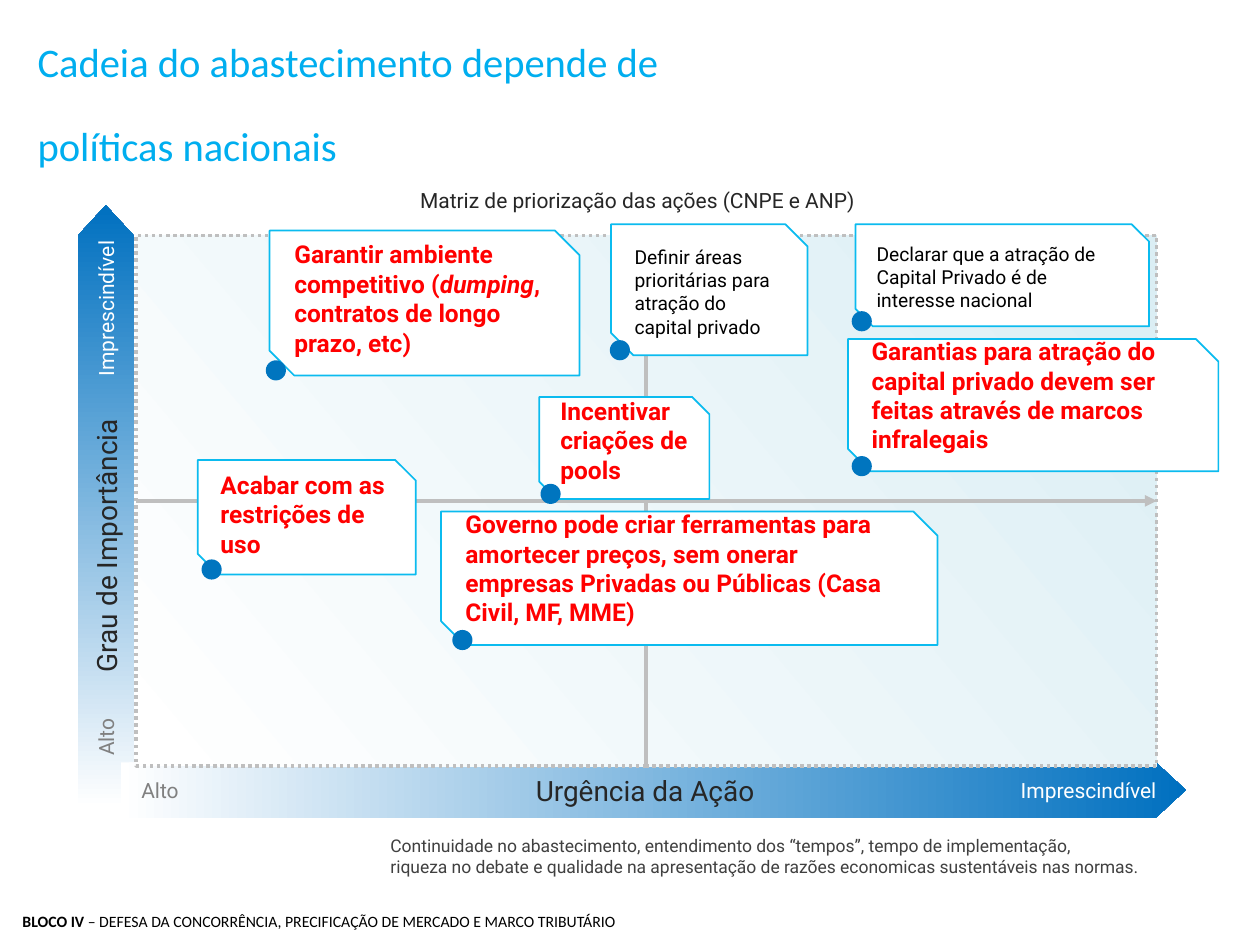
from lxml import etree
from pptx import Presentation
from pptx.dml.color import RGBColor
from pptx.enum.dml import MSO_LINE
from pptx.enum.shapes import MSO_CONNECTOR, MSO_SHAPE
from pptx.enum.text import MSO_ANCHOR, MSO_AUTO_SIZE, PP_ALIGN
from pptx.oxml.ns import qn
from pptx.util import Inches, Pt

ARROW, RECT = MSO_SHAPE.RIGHT_ARROW, MSO_SHAPE.RECTANGLE
SNIP, OVAL = MSO_SHAPE.SNIP_2_DIAG_RECTANGLE, MSO_SHAPE.OVAL
LEFT, CENTER = PP_ALIGN.LEFT, PP_ALIGN.CENTER
TOP, MIDDLE, BOTTOM = MSO_ANCHOR.TOP, MSO_ANCHOR.MIDDLE, MSO_ANCHOR.BOTTOM
GROW, DOTS, LINE = MSO_AUTO_SIZE.SHAPE_TO_FIT_TEXT, MSO_LINE.ROUND_DOT, MSO_CONNECTOR.STRAIGHT

WHITE = RGBColor(255, 255, 255)
BLACK = RGBColor(0, 0, 0)
RED = RGBColor(255, 0, 0)
SKY = RGBColor(0x00, 0xAE, 0xEF)
EDGE = RGBColor(0x0B, 0xBB, 0xEF)
BLUE = RGBColor(0x00, 0x70, 0xC0)
DOT = RGBColor(0x00, 0x75, 0xBF)
PALE = RGBColor(0xDB, 0xEE, 0xF4)
DARK = RGBColor(0x26, 0x26, 0x26)
SLATE = RGBColor(0x40, 0x40, 0x40)
GRAY = RGBColor(0x80, 0x80, 0x80)
SILVER = RGBColor(0xBF, 0xBF, 0xBF)

# Left, top (from the matrix corner), width, height, dot offset, snip, size, runs
CARDS = [
    (0.49, 1.78, 1.73, 0.91, 0.03, 0.18, 14, ["Acabar com as restrições de uso"]),
    (1.06, -0.04, 2.46, 1.15, -0.03, 0.17, 14,
     ["Garantir ambiente competitivo (", "dumping", ", contratos de longo prazo, etc)"]),
    (3.2, 1.28, 1.35, 0.81, 0.01, 0.17, 14, ["Incentivar criações de pools"]),
    (3.77, -0.09, 1.56, 1.04, -0.01, 0.17, 11,
     ["Definir áreas prioritárias para atração do capital privado"]),
    (2.42, 2.19, 3.94, 1.06, 0.09, 0.18, 14,
     ["Governo pode criar ferramentas para amortecer preços, sem onerar "
      "empresas Privadas ou Públicas (Casa Civil, MF, MME)"]),
    (5.71, -0.09, 2.33, 0.81, -0.03, 0.17, 11,
     ["Declarar que a atração de Capital Privado é de interesse nacional"]),
    (5.65, 0.82, 2.94, 1.05, 0.03, 0.17, 14,
     ["Garantias para atração do capital privado devem ser feitas através "
      "de marcos infralegais"]),
]


def write(shape, runs, size, color, font="Roboto", align=LEFT, anchor=TOP):
    frame = shape.text_frame
    frame.word_wrap = True
    frame.vertical_anchor = anchor
    para = frame.paragraphs[0]
    para.alignment = align
    para.text = runs[0]
    for text in runs[1:]:
        para.add_run().text = text
    for run in para.runs:
        run.font.size, run.font.name = Pt(size), font
        run.font.color.rgb = color
    return para


def label(slide, x, y, w, h, runs, size, color, **look):
    box = slide.shapes.add_textbox(Inches(x), Inches(y), Inches(w), Inches(h))
    write(box, runs, size, color, **look)
    box.text_frame.auto_size = GROW
    return box


def block(slide, kind, x, y, w, h, color=WHITE):
    shape = slide.shapes.add_shape(kind, Inches(x), Inches(y), Inches(w), Inches(h))
    shape.shadow.inherit = False
    shape.fill.solid()
    shape.fill.fore_color.rgb = color
    shape.line.fill.background()
    return shape


def blend(shape, end, angle):
    shape.fill.gradient()
    shape.fill.gradient_angle = angle
    for stop, color in zip(shape.fill.gradient_stops, (WHITE, end)):
        stop.color.rgb = color


def arrow(slide, x1, y1, x2, y2):
    line = slide.shapes.add_connector(LINE, Inches(x1), Inches(y1), Inches(x2), Inches(y2))
    line.line.color.rgb = SILVER
    line.line.width = Pt(2.25)
    etree.SubElement(line.line._get_or_add_ln(), qn("a:tailEnd"), type="triangle")
    etree.SubElement(line._element.spPr, qn("a:effectLst"))


def axis(slide, x, y, length, name, spots, up=False):
    """Axis arrow from its start point, with labels centred at distances along it."""
    def place(far):
        return (x, y - far) if up else (x + far, y)

    turn = 270 if up else 0
    mx, my = place(length / 2)
    bar = block(slide, ARROW, mx - length / 2, my - 0.22, length, 0.44)
    bar.adjustments[0], bar.adjustments[1] = 1, 0.54
    bar.rotation = turn
    blend(bar, BLUE, 0)
    looks = [("Alto", 0.66, 0.3, 12, GRAY), (name, 3, 0.37, 16, DARK),
             ("Imprescindível", 1.48, 0.3, 12, WHITE)]
    for far, (text, w, h, size, color) in zip(spots, looks):
        mx, my = place(far)
        box = label(slide, mx - w / 2, my - h / 2, w, h, [text], size, color,
                    align=CENTER, anchor=MIDDLE)
        box.rotation = turn


def card(slide, x, y, w, h, shift, snip, size, runs):
    shape = block(slide, SNIP, x, y, w, h)
    shape.adjustments[0], shape.adjustments[1] = 0, snip
    shape.line.color.rgb = EDGE
    shape.line.width = Pt(1)
    strong = size == 14
    para = write(shape, runs, size, RED if strong else BLACK, anchor=BOTTOM)
    for run in para.runs:
        run.font.bold = strong
        run.font.italic = run.text == "dumping"
    block(slide, OVAL, x + shift, y + h - 0.12, 0.16, 0.16, DOT)


def matrix(slide, x, y, w, h):
    # Field and its centre lines
    field = block(slide, RECT, x, y, w, h)
    blend(field, PALE, 40)
    field.line.color.rgb = SILVER
    field.line.width = Pt(2)
    field.line.dash_style = DOTS
    arrow(slide, x, y + h / 2, x + w, y + h / 2)
    arrow(slide, x + w / 2, y + h, x + w / 2, y)
    # Action cards
    for dx, dy, *rest in CARDS:
        card(slide, x + dx, y + dy, *rest)


def heading(slide, x, y, w, h):
    box = label(slide, x, y, w, h,
                ["Cadeia do abastecimento depende de \vpolíticas nacionais"],
                40, SKY, font="Calibri")
    for run in box.text_frame.paragraphs[0].runs:
        run._r.get_or_add_rPr().set("baseline", "30000")


def footer(slide, x, y, w, h):
    box = label(slide, x, y, w, h,
                ["BLOCO IV ", "– DEFESA DA CONCORRÊNCIA, PRECIFICAÇÃO DE MERCADO E MARCO TRIBUTÁRIO"],
                9, BLACK, font="Calibri")
    box.text_frame.paragraphs[0].runs[0].font.bold = True


def main():
    deck = Presentation()
    deck.slide_width, deck.slide_height = Inches(10), Inches(7.5)
    slide = deck.slides.add_slide(deck.slide_layouts[6])
    heading(slide, 0.2, 0.18, 8.62, 1)
    # Matrix caption and closing remark
    caption = label(slide, 3.2, 1.44, 3.72, 0.3,
                    ["Matriz de priorização das ações (CNPE e ANP)"], 12, DARK, align=CENTER)
    caption.text_frame.word_wrap = False
    label(slide, 3, 6.58, 6.25, 0.44,
          ["Continuidade no abastecimento, entendimento dos “tempos”, tempo de implementação, \v"
           "riqueza no debate e qualidade na apresentação de razões economicas sustentáveis nas normas."],
          10, SLATE)
    # Axes and matrix
    axis(slide, 0.84, 6.41, 4.78, "Grau de Importância", (0.56, 2.08, 3.96), up=True)
    axis(slide, 0.96, 6.27, 8.45, "Urgência da Ação", (0.31, 4.16, 7.68))
    matrix(slide, 1.08, 1.87, 8.1, 4.21)
    footer(slide, 0.08, 7.19, 5.55, 0.25)
    deck.save("out.pptx")


if __name__ == "__main__":
    main()
